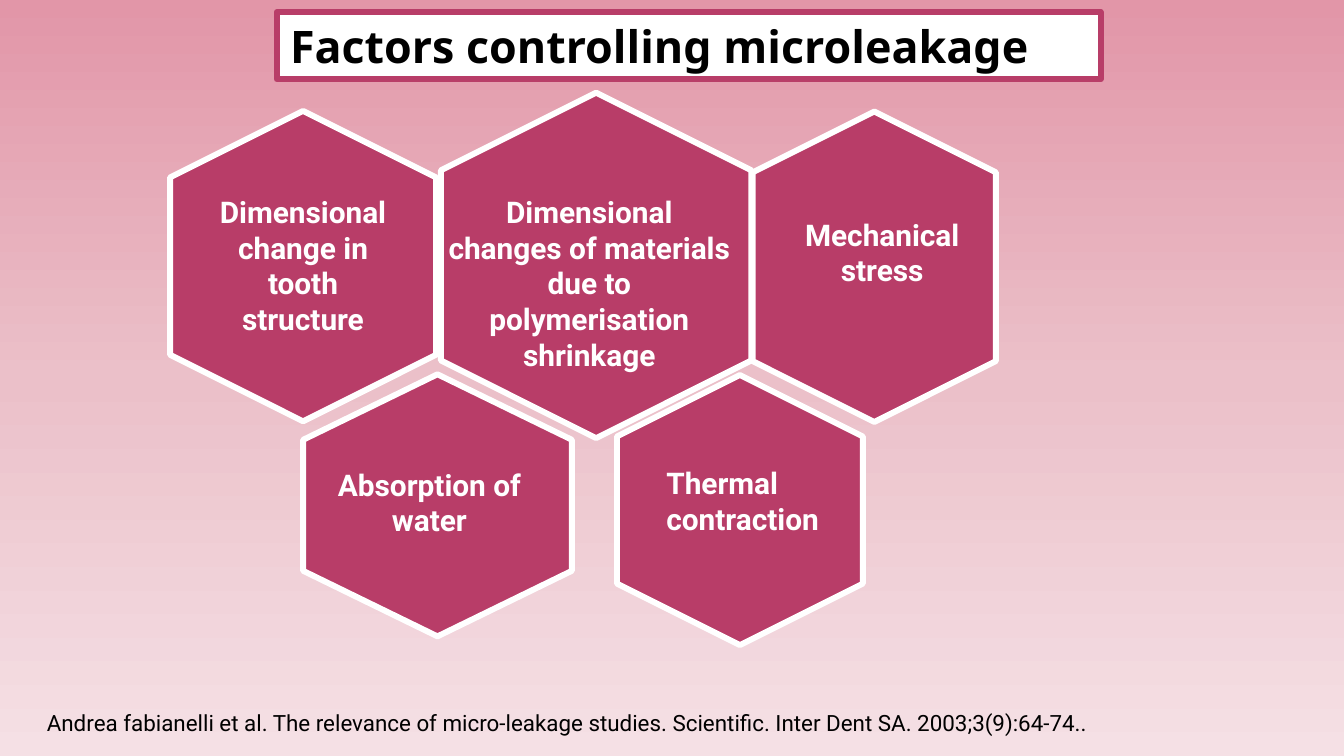
import copy
from dataclasses import dataclass
from typing import Optional

import pptx
import pptx.dml.color
import pptx.enum.shapes
import pptx.enum.text
import pptx.oxml
import pptx.oxml.ns
import pptx.util

Inches = pptx.util.Inches
Align = pptx.enum.text.PP_ALIGN
Preset = pptx.enum.shapes.MSO_SHAPE


@dataclass(frozen=True)
class Theme:
    berry: str = "B83D68"
    white: str = "FFFFFF"
    black: str = "000000"
    backdrop: tuple = ((0, "E296A8"), (0.5, "EBC0C9"), (1, "F5E0E5"))
    body_font: str = "Roboto"
    title_font: str = "Noto Sans"
    title_size: int = 24
    factor_size: int = 16
    citation_size: int = 12
    outline: float = 3.15


@dataclass(frozen=True)
class Box:
    left: float
    top: float
    width: float
    height: float

    def lengths(self) -> tuple:
        return tuple(Inches(v) for v in (self.left, self.top, self.width, self.height))


@dataclass(frozen=True)
class Factor:
    label: str
    hexagon: Box  # before the quarter turn
    label_box: Box
    align: Optional[Align] = Align.CENTER


THEME = Theme()
FACTORS = (
    Factor("Dimensional changes of materials due to polymerisation shrinkage",
           Box(3.15, 0.82, 2.57, 2.31), Box(3.23, 1.39, 2.31, 1.45)),
    Factor("Thermal contraction",
           Box(4.5, 2.88, 2.01, 1.83), Box(4.86, 3.41, 1.81, 0.64), Align.LEFT),
    Factor("Absorption of water",
           Box(2.28, 2.76, 1.95, 2), Box(2.29, 3.42, 1.81, 0.64)),
    Factor("Mechanical stress",
           Box(5.35, 1.08, 2.31, 1.81), Box(5.73, 1.56, 1.67, 0.64)),
    Factor("Dimensional change in tooth structure",
           Box(1.1, 0.99, 2.31, 1.98), Box(1.42, 1.39, 1.67, 1.18)),
)


def rgb(value: str) -> pptx.dml.color.RGBColor:
    return pptx.dml.color.RGBColor.from_string(value)


def paint_backdrop(slide) -> None:
    fill = slide.background.fill
    fill.gradient()
    fill.gradient_angle = 270
    stop_list = next(slide.element.iter(pptx.oxml.ns.qn("a:gsLst")))
    stop_list.append(copy.deepcopy(stop_list[-1]))
    for stop, (position, colour) in zip(fill.gradient_stops, THEME.backdrop):
        stop.position = position
        stop.color.rgb = rgb(colour)


def add_outlined(slide, preset: Preset, box: Box, fill: str, line: str):
    """Add a filled preset shape with a round-joined outline."""
    shape = slide.shapes.add_shape(preset, *box.lengths())
    shape.shadow.inherit = False
    shape.fill.solid()
    shape.fill.fore_color.rgb = rgb(fill)
    shape.line.color.rgb = rgb(line)
    shape.line.width = pptx.util.Pt(THEME.outline)
    outline = shape.element.spPr.find(pptx.oxml.ns.qn("a:ln"))
    outline.append(pptx.oxml.parse_xml(f'<a:round {pptx.oxml.ns.nsdecls("a")}/>'))
    return shape


def write(frame, wording: str, colour: str, align: Align, **font_format) -> None:
    frame.word_wrap = True
    paragraph = frame.paragraphs[0]
    paragraph.alignment = align
    run = paragraph.add_run()
    run.text = wording
    run.font.color.rgb = rgb(colour)
    for attribute, value in font_format.items():
        setattr(run.font, attribute, value)


def add_label(slide, box: Box, wording: str, colour: str, align: Align, **font_format) -> None:
    frame = slide.shapes.add_textbox(*box.lengths()).text_frame
    frame.auto_size = pptx.enum.text.MSO_AUTO_SIZE.SHAPE_TO_FIT_TEXT
    write(frame, wording, colour, align, name=THEME.body_font, **font_format)


def main() -> None:
    deck = pptx.Presentation()
    deck.slide_width = Inches(10)
    deck.slide_height = deck.slide_width * 9 // 16
    slide = deck.slides.add_slide(deck.slide_layouts[6])
    paint_backdrop(slide)

    for factor in FACTORS:
        hexagon = add_outlined(slide, Preset.HEXAGON, factor.hexagon, THEME.berry, THEME.white)
        hexagon.adjustments[0] = 0.25
        hexagon.rotation = 90
    for factor in FACTORS:
        add_label(slide, factor.label_box, factor.label, THEME.white, factor.align,
                  size=pptx.util.Pt(THEME.factor_size), bold=True)

    title = add_outlined(slide, Preset.RECTANGLE, Box(2.06, 0.09, 6.13, 0.5),
                         THEME.white, THEME.berry)
    write(title.text_frame, "Factors controlling microleakage", THEME.black, Align.LEFT,
          name=THEME.title_font, size=pptx.util.Pt(THEME.title_size), bold=True)

    add_label(slide, Box(0.25, 5.23, 8.35, 0.3),
              "Andrea fabianelli et al. The relevance of micro-leakage studies. "
              "Scientific. Inter Dent SA. 2003;3(9):64-74..",
              THEME.black, Align.LEFT, size=pptx.util.Pt(THEME.citation_size))

    deck.save("out.pptx")


if __name__ == "__main__":
    main()
